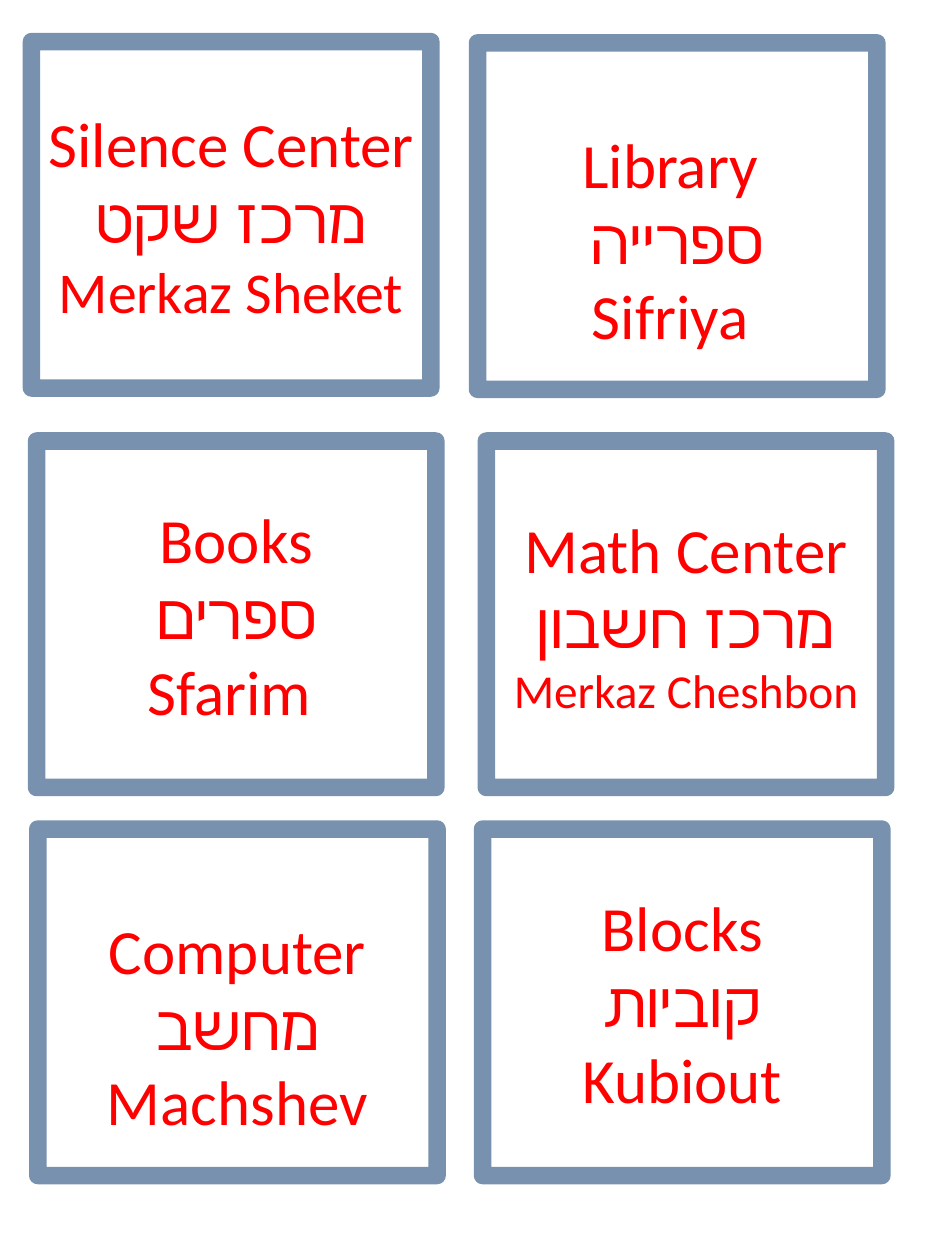
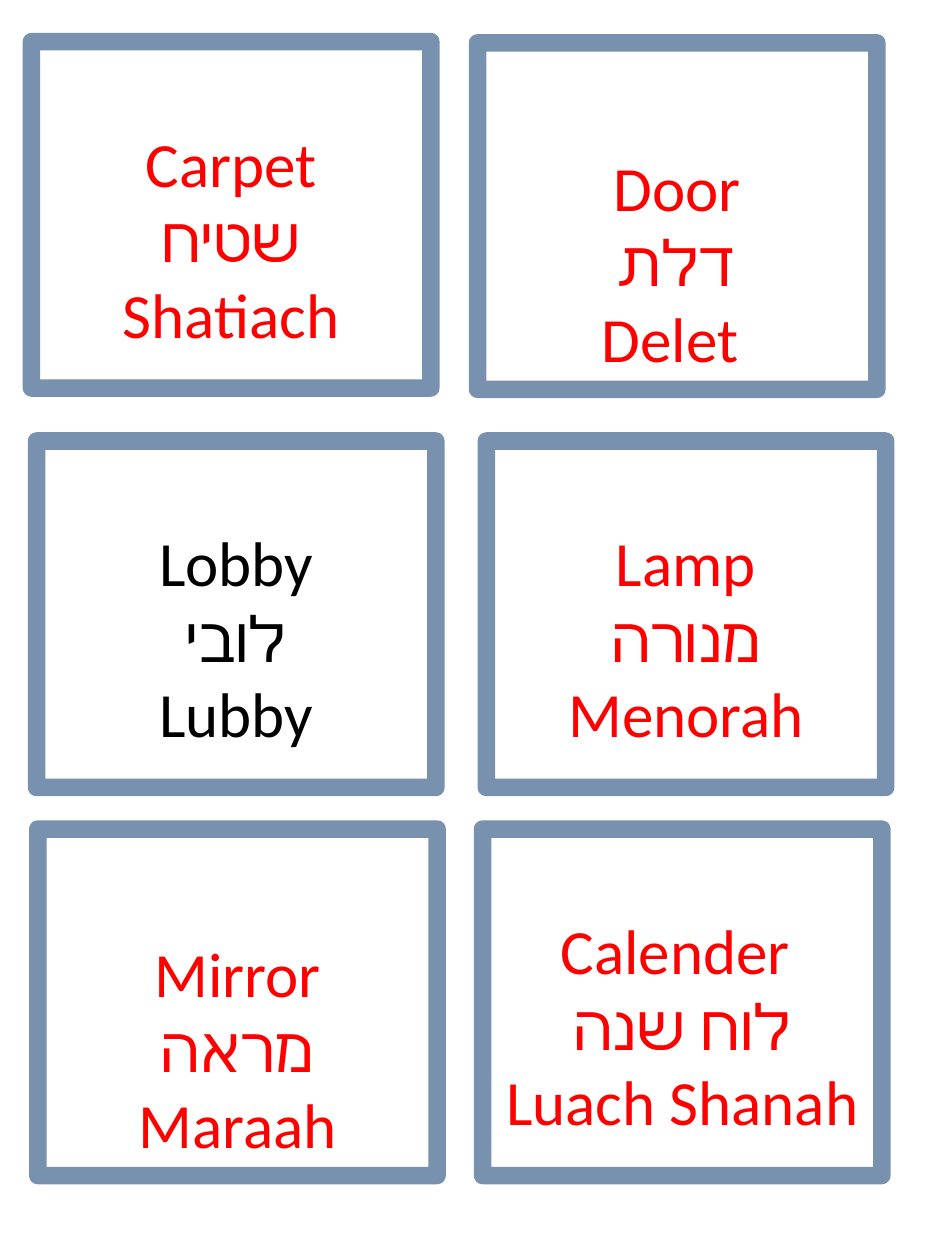
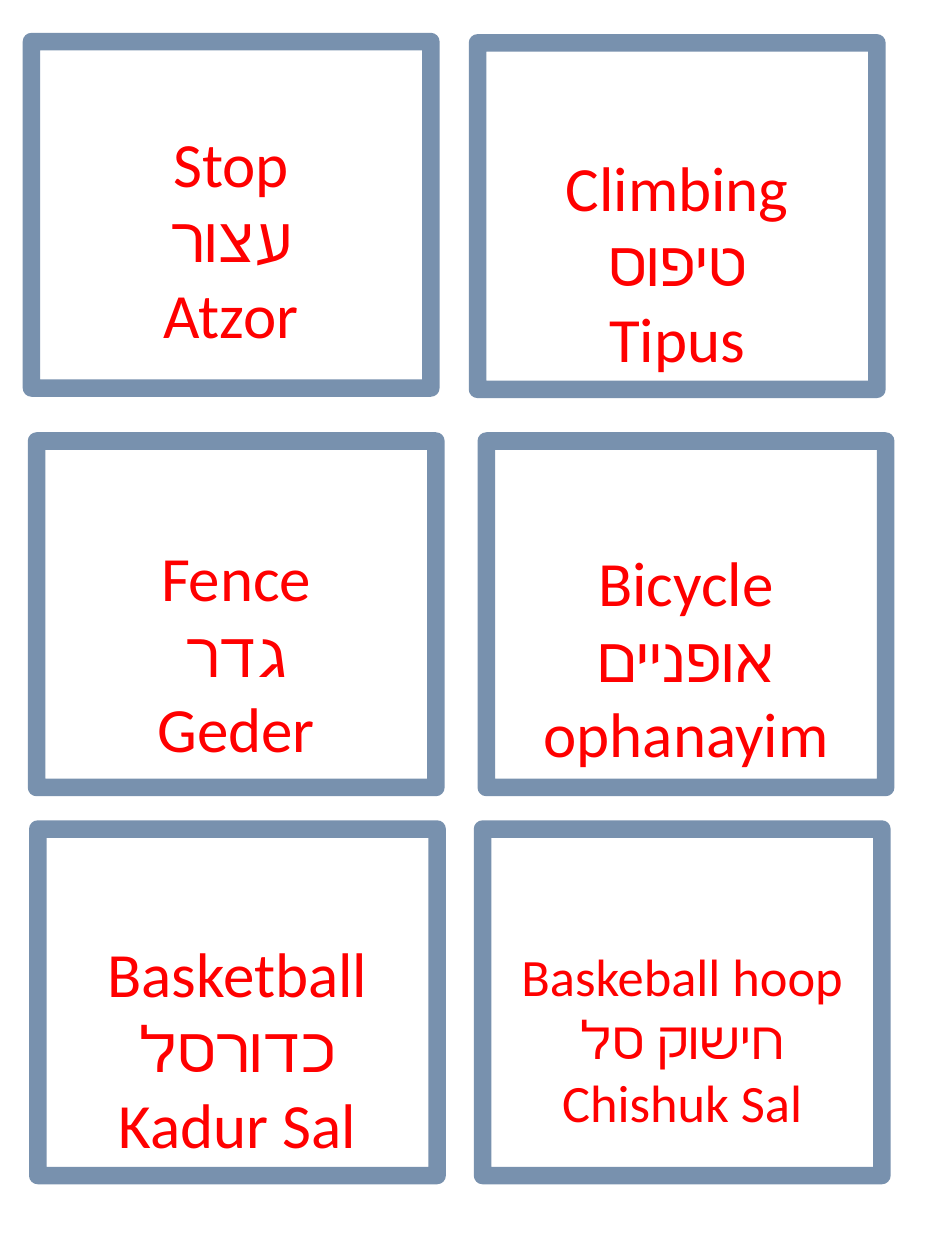
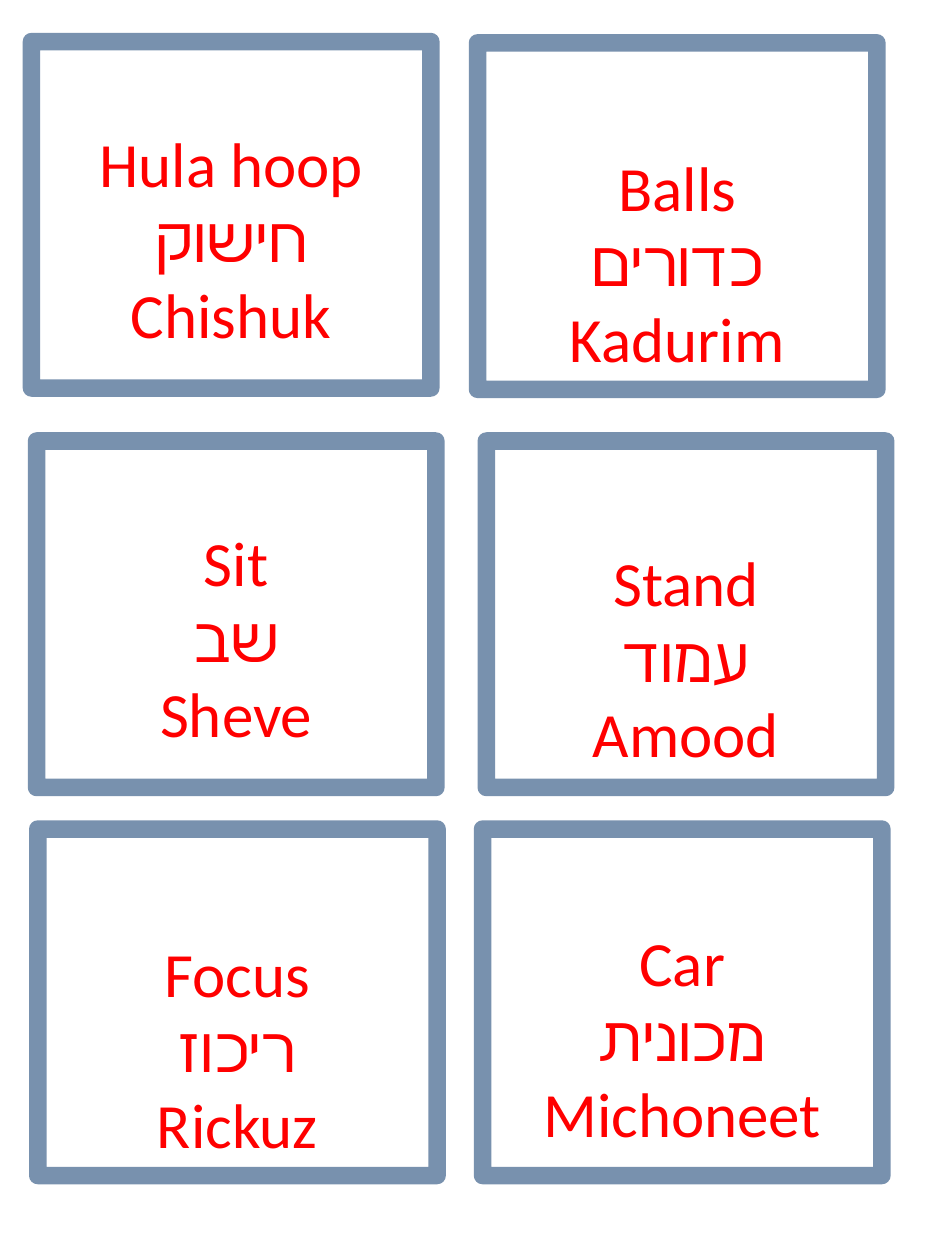
from dataclasses import dataclass

from lxml.etree import SubElement
from pptx import Presentation
from pptx.dml.color import RGBColor
from pptx.enum.shapes import MSO_SHAPE as Preset
from pptx.enum.text import MSO_ANCHOR as Anchor, PP_ALIGN as Align
from pptx.oxml.ns import qn
from pptx.util import Inches, Pt

WHITE = RGBColor(0xFF, 0xFF, 0xFF)
BLACK = RGBColor(0, 0, 0)
RED = RGBColor(0xFF, 0, 0)
FRAME_BLUE = RGBColor(0x39, 0x5E, 0x89)
FONT = "Calibri"
CARD_WIDTH, CARD_HEIGHT = 3.17, 2.75
FRAME_WIDTH, FRAME_OPACITY = 10, 68
SIDE_INSET, END_INSET = 0.1, 0.05
SLOTS = [(0.25, 0.33), (3.79, 0.34), (0.29, 3.5),
         (0.3, 6.58), (3.86, 3.5), (3.83, 6.58)]


@dataclass
class Label:
    """Words of one card, with its downward shift in inches and text style."""
    english: str
    hebrew: str
    spoken: str
    drop: float = 0
    size: int = 36
    spoken_size: int = 0
    color: RGBColor = RED


SHEETS = [
    [
        Label("Silence Center", "מרכז שקט", "Merkaz Sheket", spoken_size=33),
        Label("Library ", "ספרייה", "Sifriya ", 0.18),
        Label("Books", "ספרים", "Sfarim "),
        Label("Computer", "מחשב", "Machshev", 0.18),
        Label("Math Center", "מרכז חשבון", "Merkaz Cheshbon", spoken_size=27),
        Label("Blocks", "קוביות", "Kubiout"),
    ],
    [
        Label("Carpet", "שטיח", "Shatiach", 0.18),
        Label("Door", "דלת", "Delet ", 0.36),
        Label("Lobby", "לובי", "Lubby", 0.18, color=BLACK),
        Label("Mirror", "מראה", "Maraah", 0.36),
        Label("Lamp", "מנורה", "Menorah", 0.18),
        Label("Calender ", "לוח שנה", "Luach Shanah", 0.18),
    ],
    [
        Label("Stop", "עצור", "Atzor", 0.18),
        Label("Climbing", "טיפוס", "Tipus", 0.36),
        Label("Fence", "גדר", "Geder", 0.3),
        Label("Basketball", "כדורסל", "Kadur Sal", 0.36),
        Label("Bicycle", "אופניים", "ophanayim", 0.34),
        Label("Baskeball hoop", "חישוק סל", "Chishuk Sal", 0.29, size=30),
    ],
    [
        Label("Hula hoop", "חישוק", "Chishuk", 0.18),
        Label("Balls", "כדורים", "Kadurim", 0.36),
        Label("Sit", "שב", "Sheve", 0.18),
        Label("Focus", "ריכוז", "Rickuz", 0.36),
        Label("Stand", "עמוד", "Amood", 0.34),
        Label("Car", "מכונית", "Michoneet", 0.27),
    ],
]


def add_frame(slide, left, top):
    """Add a white card with a translucent blue border."""
    card = slide.shapes.add_shape(
        Preset.RECTANGLE, Inches(left), Inches(top),
        Inches(CARD_WIDTH), Inches(CARD_HEIGHT))
    card.shadow.inherit = False
    card.fill.solid()
    card.fill.fore_color.rgb = WHITE
    card.line.width = Pt(FRAME_WIDTH)
    card.line.color.rgb = FRAME_BLUE
    border_color = card.line._ln.find(qn("a:solidFill"))[0]
    SubElement(border_color, qn("a:alpha"), val=str(FRAME_OPACITY * 1000))
    return card


def write_label(card, label):
    """Write the three lines of a label, centred and shifted down by its drop."""
    frame = card.text_frame
    frame.word_wrap = True
    frame.vertical_anchor = Anchor.MIDDLE
    frame.margin_left = frame.margin_right = Inches(SIDE_INSET)
    frame.margin_top = Inches(END_INSET + 2 * label.drop)
    frame.margin_bottom = Inches(END_INSET)
    lines = frame.paragraphs[0]
    lines.alignment = Align.CENTER
    words = [(label.english, label.size), (label.hebrew, label.size),
             (label.spoken, label.spoken_size or label.size)]
    for number, (word, size) in enumerate(words):
        if number:
            lines.add_line_break()
        run = lines.add_run()
        run.text = word
        run.font.name = FONT
        run.font.size = Pt(size)
        run.font.color.rgb = label.color


def main():
    """Build the four sheets of word cards."""
    deck = Presentation()
    deck.slide_width, deck.slide_height = Inches(7.5), Inches(10)
    for labels in SHEETS:
        slide = deck.slides.add_slide(deck.slide_layouts[6])
        for (left, top), label in zip(SLOTS, labels):
            write_label(add_frame(slide, left, top), label)
    deck.save("out.pptx")


if __name__ == "__main__":
    main()
